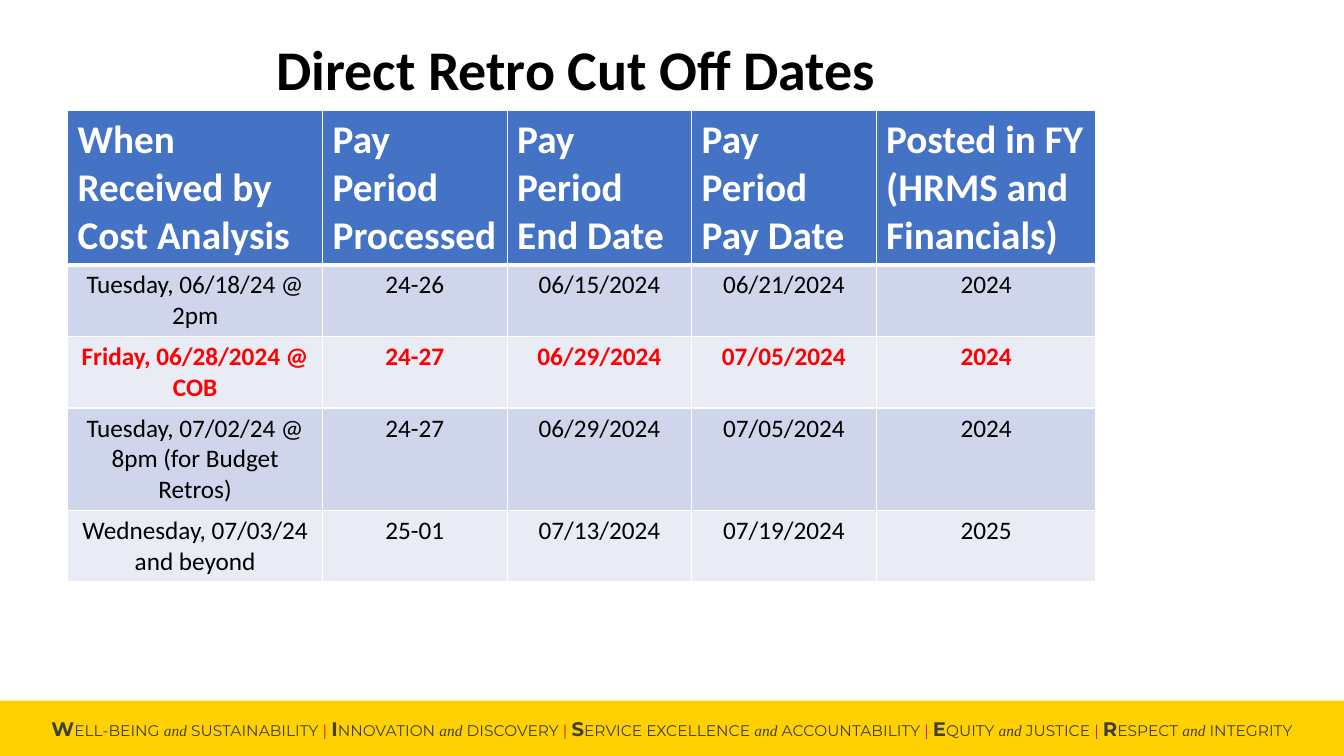
from dataclasses import dataclass

import pptx
import pptx.dml.color
import pptx.enum.shapes
import pptx.enum.text
import pptx.oxml
import pptx.oxml.ns
import pptx.util
from pptx.util import Inches

ALIGN = pptx.enum.text.PP_ALIGN
ANCHOR = pptx.enum.text.MSO_ANCHOR


@dataclass(frozen=True)
class Theme:
    body_font: str = "Calibri"
    footer_font: str = "Montserrat"
    joiner_font: str = "Times New Roman"
    black: str = "000000"
    white: str = "FFFFFF"
    alert: str = "FF0000"
    header_fill: str = "4472C4"
    band_fills: tuple = ("CFD5EA", "E9EBF5")
    footer_fill: str = "FFD102"
    footer_text: str = "404042"
    footer_divider: str = "E31937"
    title_size: int = 40
    header_size: int = 28
    cell_size: int = 18
    initial_size: int = 14
    footer_size: int = 11


THEME = Theme()

COLUMN_WIDTHS = (2.53, 1.83, 1.83, 1.83, 2.18)
ROW_HEIGHTS = (1.17, 0.7, 0.7, 0.97, 0.71)
HEADERS = (
    "When Received by Cost Analysis",
    "Pay Period Processed",
    "Pay Period End Date",
    "Pay Period Pay Date",
    "Posted in FY (HRMS and Financials)",
)
CUT_OFFS = (
    ("Tuesday, 06/18/24 @ 2pm", "24-26", "06/15/2024", "06/21/2024", "2024"),
    ("Friday, 06/28/2024 @ COB", "24-27", "06/29/2024", "07/05/2024", "2024"),
    ("Tuesday, 07/02/24 @ 8pm (for Budget Retros)", "24-27", "06/29/2024", "07/05/2024", "2024"),
    ("Wednesday, 07/03/24 and beyond", "25-01", "07/13/2024", "07/19/2024", "2025"),
)
HIGHLIGHTED_ROW = 2
VALUES = (
    ("WELL-BEING", "SUSTAINABILITY"),
    ("INNOVATION", "DISCOVERY"),
    ("SERVICE EXCELLENCE", "ACCOUNTABILITY"),
    ("EQUITY", "JUSTICE"),
    ("RESPECT", "INTEGRITY"),
)


def rgb(value):
    return pptx.dml.color.RGBColor.from_string(value)


def style_font(font, name, size, color, bold=False, italic=False):
    font.name = name
    font.size = pptx.util.Pt(size)
    font.color.rgb = rgb(color)
    font.bold = bold
    font.italic = italic


def add_span(para, text, name, size, color, bold=False, italic=False):
    span = para.add_run()
    span.text = text
    style_font(span.font, name, size, color, bold, italic)


def add_footer(page, width):
    bar = page.shapes.add_shape(
        pptx.enum.shapes.MSO_SHAPE.RECTANGLE, 0, Inches(6.95), width, Inches(0.55)
    )
    bar.shadow.inherit = False
    bar.fill.solid()
    bar.fill.fore_color.rgb = rgb(THEME.footer_fill)
    bar.line.fill.background()
    bar.text_frame.vertical_anchor = ANCHOR.MIDDLE
    para = bar.text_frame.paragraphs[0]
    para.alignment = ALIGN.CENTER
    font, size, color = THEME.footer_font, THEME.footer_size, THEME.footer_text
    for index, (first, second) in enumerate(VALUES):
        if index:
            add_span(para, " | ", font, size, THEME.footer_divider)
        add_span(para, first[0], font, THEME.initial_size, color, bold=True)
        add_span(para, first[1:] + " ", font, size, color)
        add_span(para, "and", THEME.joiner_font, size, color, italic=True)
        add_span(para, " " + second, font, size, color)


def set_title(page, text):
    title = page.shapes.title
    title.left, title.top = Inches(2.64), Inches(0.37)
    title.width, title.height = Inches(9.59), Inches(0.94)
    frame = title.text_frame
    frame.text = text
    frame.word_wrap = True
    frame.auto_size = pptx.enum.text.MSO_AUTO_SIZE.NONE
    frame.vertical_anchor = ANCHOR.TOP
    para = frame.paragraphs[0]
    para.alignment = ALIGN.LEFT
    para.line_spacing = 0.9
    style_font(para.font, THEME.body_font, THEME.title_size, THEME.black, bold=True)


def set_borders(cell, top, bottom):
    properties = cell._tc.get_or_add_tcPr()
    for side, points in (("L", 1), ("R", 1), ("T", top), ("B", bottom)):
        properties.append(pptx.oxml.parse_xml(
            f'<a:ln{side} {pptx.oxml.ns.nsdecls("a")} w="{pptx.util.Pt(points)}">'
            f'<a:solidFill><a:srgbClr val="{THEME.white}"/></a:solidFill></a:ln{side}>'
        ))


def fill_cell(cell, text, row):
    is_header = row == 0
    highlighted = row == HIGHLIGHTED_ROW
    set_borders(cell, top=3 if row == 1 else 1, bottom=3 if is_header else 1)
    cell.fill.solid()
    cell.text = text
    para = cell.text_frame.paragraphs[0]
    if is_header:
        cell.fill.fore_color.rgb = rgb(THEME.header_fill)
        para.alignment = ALIGN.LEFT
        style_font(para.font, THEME.body_font, THEME.header_size, THEME.white, bold=True)
    else:
        cell.fill.fore_color.rgb = rgb(THEME.band_fills[(row - 1) % 2])
        para.alignment = ALIGN.CENTER
        color = THEME.alert if highlighted else THEME.black
        style_font(para.font, THEME.body_font, THEME.cell_size, color, bold=highlighted)


def add_cut_off_table(page):
    rows = (HEADERS, *CUT_OFFS)
    table = page.shapes.add_table(
        len(rows), len(HEADERS), Inches(0.67), Inches(1.1),
        Inches(sum(COLUMN_WIDTHS)), Inches(sum(ROW_HEIGHTS))
    ).table
    for column, width in zip(table.columns, COLUMN_WIDTHS):
        column.width = Inches(width)
    for row, height in zip(table.rows, ROW_HEIGHTS):
        row.height = Inches(height)
    for row_index, texts in enumerate(rows):
        for column_index, text in enumerate(texts):
            fill_cell(table.cell(row_index, column_index), text, row_index)


def main():
    deck = pptx.Presentation()
    deck.slide_width, deck.slide_height = Inches(13.33), Inches(7.5)
    page = deck.slides.add_slide(deck.slide_layouts.get_by_name("Title Only"))
    add_footer(page, deck.slide_width)
    set_title(page, "Direct Retro Cut Off Dates")
    add_cut_off_table(page)
    deck.save("out.pptx")


if __name__ == "__main__":
    main()
